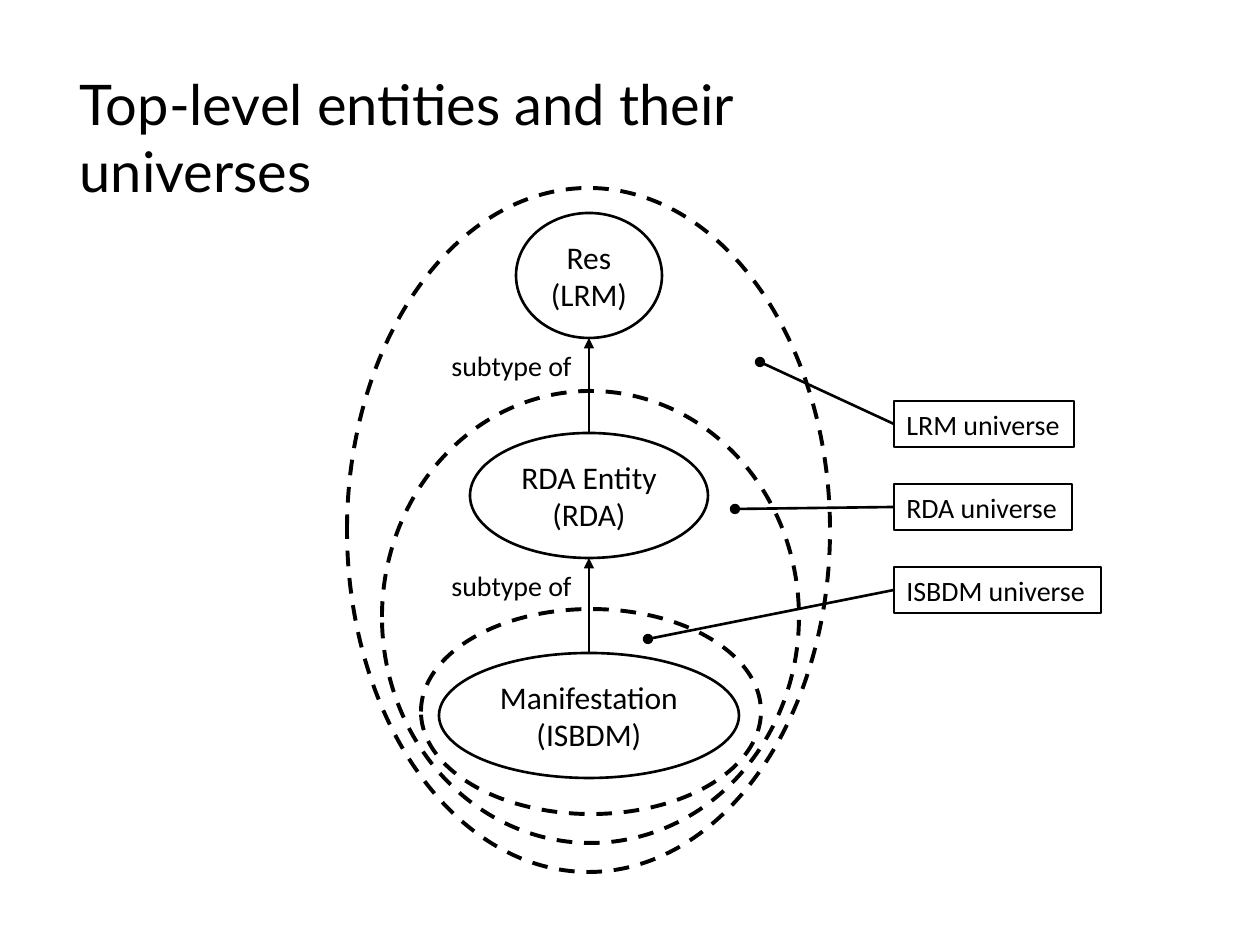
from lxml import etree
from pptx import Presentation
from pptx import util as u
from pptx.dml.color import RGBColor
from pptx.enum import dml, shapes, text
from pptx.oxml import ns

PX = 914400 / 126
BLACK = "000000"


def emu(*lengths):
    return [u.Emu(round(length * PX)) for length in lengths]


def color(value):
    return RGBColor.from_string(value)


def write(shape, content, size, align, font="Calibri", wrap=False):
    frame = shape.text_frame
    frame.text = content
    frame.word_wrap = wrap
    for paragraph in frame.paragraphs:
        paragraph.alignment = align
        paragraph.font.name = font
        paragraph.font.size = u.Pt(size)
        paragraph.font.color.rgb = color(BLACK)


def add_outline(slide, kind, box, width=1.5, dashed=False):
    shape = slide.shapes.add_shape(kind, *emu(*box))
    shape.shadow.inherit = False
    shape.fill.background()
    shape.line.color.rgb = color(BLACK)
    shape.line.width = u.Pt(width)
    if dashed:
        shape.line.dash_style = dml.MSO_LINE.DASH
    return shape


def add_link(slide, source, site, target, head):
    connector = slide.shapes.add_connector(
        shapes.MSO_CONNECTOR.STRAIGHT, 0, 0, *emu(*target))
    connector.begin_connect(source, site)
    connector.line.color.rgb = color(BLACK)
    connector.line.width = u.Pt(1.5)
    tail = etree.SubElement(connector.line._get_or_add_ln(), ns.qn("a:tailEnd"))
    tail.set("type", head)
    etree.SubElement(connector._element.spPr, ns.qn("a:effectLst"))


def add_title(slide, box):
    title = slide.shapes.title
    title.left, title.top, title.width, title.height = emu(*box)
    write(title, "Top-level entities and their universes", 32,
          text.PP_ALIGN.LEFT, "Lato", True)
    title.text_frame.vertical_anchor = text.MSO_ANCHOR.TOP
    title.text_frame.auto_size = text.MSO_AUTO_SIZE.NONE


def add_entities(slide, box):
    left, top, width, height = box
    center = left + width // 2
    entity_height = 125
    pitch = (height - entity_height) // 2
    entities = [("Res\n(LRM)", 146), ("RDA Entity\n(RDA)", 238),
                ("Manifestation\n(ISBDM)", 300)]
    for index, (name, entity_width) in enumerate(entities):
        y = top + index * pitch
        entity = add_outline(
            slide, shapes.MSO_SHAPE.OVAL,
            (center - entity_width // 2, y, entity_width, entity_height))
        write(entity, name, 18, text.PP_ALIGN.CENTER)
        if index:
            parent_bottom = y - pitch + entity_height
            add_link(slide, entity, 0, (center, parent_bottom), "triangle")
            label = slide.shapes.add_textbox(*emu(left, parent_bottom + 4, 147, 47))
            write(label, "subtype of", 16, text.PP_ALIGN.LEFT)


def add_universes(slide, box):
    left, top, width, height = box
    for x, y, right, bottom in [(0, 0, 0, 0), (35, 203, 31, 29), (74, 421, 69, 58)]:
        add_outline(slide, shapes.MSO_SHAPE.OVAL,
                    (left + x, top + y, width - x - right, height - y - bottom),
                    2.25, True)


def add_labels(slide, box):
    left, top, width, height = box
    label_height = 46
    pitch = (height - label_height) // 2
    labels = [("LRM universe", 180, (-134, -39)),
              ("RDA universe", 178, (-159, 108)),
              ("ISBDM universe", width, (-246, 238))]
    for index, (name, label_width, (x, y)) in enumerate(labels):
        label = add_outline(slide, shapes.MSO_SHAPE.RECTANGLE,
                            (left, top + index * pitch, label_width, label_height))
        write(label, name, 16, text.PP_ALIGN.LEFT)
        add_link(slide, label, 1, (left + x, top + y), "oval")


def main():
    presentation = Presentation()
    presentation.slide_width, presentation.slide_height = emu(1260, 945)
    slide = presentation.slides.add_slide(presentation.slide_layouts[5])
    add_title(slide, (67, 63, 911, 81))
    add_entities(slide, (439, 213, 300, 565))
    add_universes(slide, (347, 188, 483, 684))
    add_labels(slide, (894, 401, 207, 212))
    presentation.save("out.pptx")


if __name__ == "__main__":
    main()
